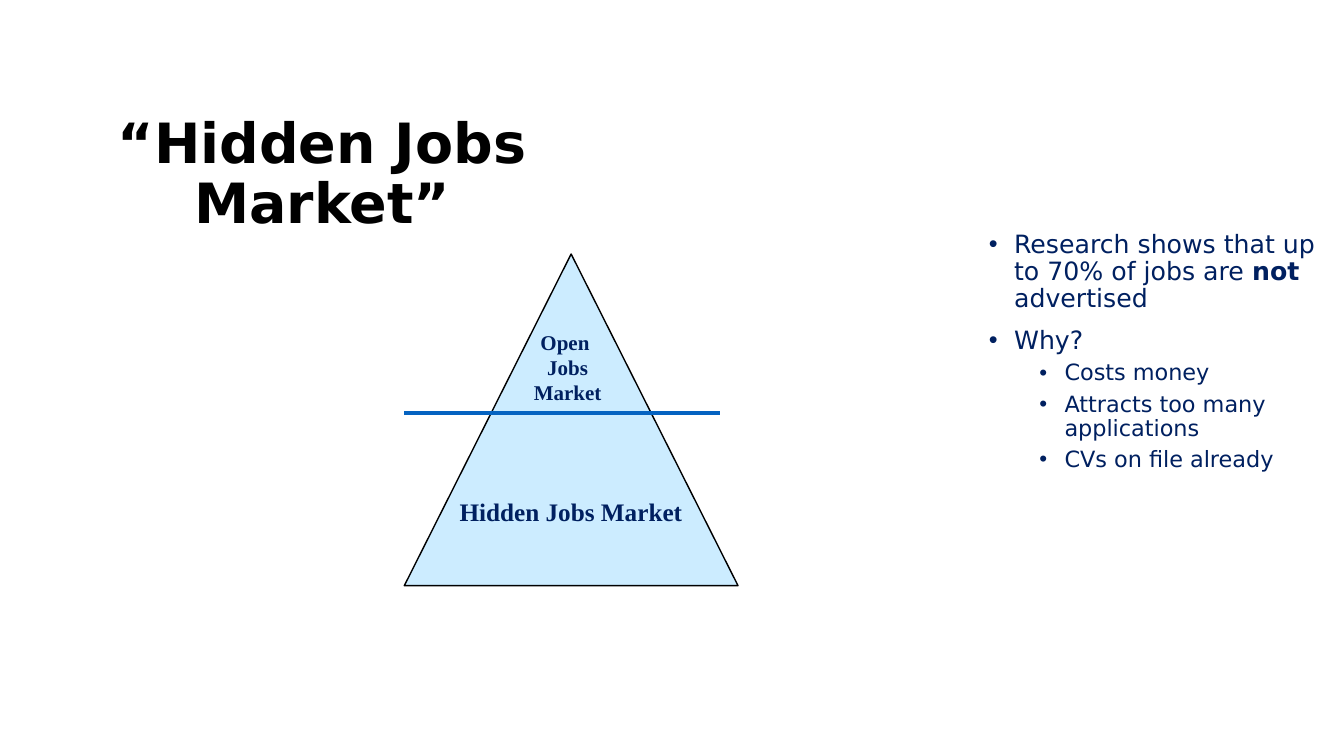
from lxml import etree
from pptx import Presentation
from pptx.dml.color import RGBColor
from pptx.enum.shapes import MSO_CONNECTOR, MSO_SHAPE
from pptx.enum.text import MSO_ANCHOR, PP_ALIGN
from pptx.oxml.ns import qn
from pptx.util import Inches, Pt

NAVY = "002060"
SANS, SERIF = "DejaVu Sans", "Times New Roman"


def color(hex_code):
    return RGBColor.from_string(hex_code)


def add_text_frame(left, top, width, height):
    box = slide.shapes.add_textbox(Inches(left), Inches(top), Inches(width), Inches(height))
    box.text_frame.word_wrap = True
    return box.text_frame


prs = Presentation()
prs.slide_width, prs.slide_height = Inches(13.33), Inches(7.5)
slide = prs.slides.add_slide(prs.slide_layouts[6])

# Title
title = add_text_frame(0, 1.14, 6.39, 1.2)
title.vertical_anchor = MSO_ANCHOR.MIDDLE
heading = title.paragraphs[0]
heading.text = "“Hidden Jobs Market”"
heading.alignment = PP_ALIGN.CENTER
heading.line_spacing = 0.9
heading.font.name, heading.font.size, heading.font.bold = SANS, Pt(39.6), True
heading.font.color.rgb = color("000000")

# Research points: level and runs, every second run in bold
points = [
    (0, ["Research shows that up to 70% of jobs are ", "not", " advertised"]),
    (0, ["Why?"]),
    (1, ["Costs money"]),
    (1, ["Attracts too many applications"]),
    (1, ["CVs on file already"]),
]
research = add_text_frame(9.71, 2.25, 3.62, 3.75)
for number, (level, pieces) in enumerate(points):
    point = research.add_paragraph() if number else research.paragraphs[0]
    point.level = level
    properties = point._p.get_or_add_pPr()
    properties.set("marL", str(Inches(0.25 + 0.5 * level)))
    properties.set("indent", str(Inches(-0.25)))
    etree.SubElement(properties, qn("a:buFont"), typeface="Arial")
    etree.SubElement(properties, qn("a:buChar"), char="•")
    point.line_spacing = 0.9
    point.space_before = Pt(10 - 5 * level if number else 0)
    point.font.name, point.font.size = SANS, Pt(18 - 2 * level)
    point.font.color.rgb = color(NAVY)
    for position, piece in enumerate(pieces):
        run = point.add_run()
        run.text = piece
        if position % 2:
            run.font.bold = True

# Jobs market pyramid
pyramid = slide.shapes.add_shape(
    MSO_SHAPE.ISOSCELES_TRIANGLE, Inches(4.01), Inches(2.52), Inches(3.31), Inches(3.29))
pyramid.shadow.inherit = False
pyramid.fill.solid()
pyramid.fill.fore_color.rgb = color("CCECFF")
pyramid.line.color.rgb = color("000000")
pyramid.line.width = Pt(1)

# Divider between open and hidden jobs
divider = slide.shapes.add_connector(
    MSO_CONNECTOR.STRAIGHT, Inches(4.01), Inches(4.1), Inches(7.14), Inches(4.1))
divider.line.color.rgb = color("0563C1")
divider.line.width = Pt(3)
etree.SubElement(divider._element.spPr, qn("a:effectLst"))

# Pyramid labels
for words, place, size, alignment in [
    ("Open \vJobs Market", (5.01, 3.22, 1.24, 0.86), 15, PP_ALIGN.CENTER),
    ("Hidden Jobs Market", (4.46, 4.87, 2.78, 0.4), 18, PP_ALIGN.LEFT),
]:
    label = add_text_frame(*place).paragraphs[0]
    label.text = words
    label.alignment = alignment
    label.font.name, label.font.size, label.font.bold = SERIF, Pt(size), True
    label.font.color.rgb = color(NAVY)

prs.save("out.pptx")
